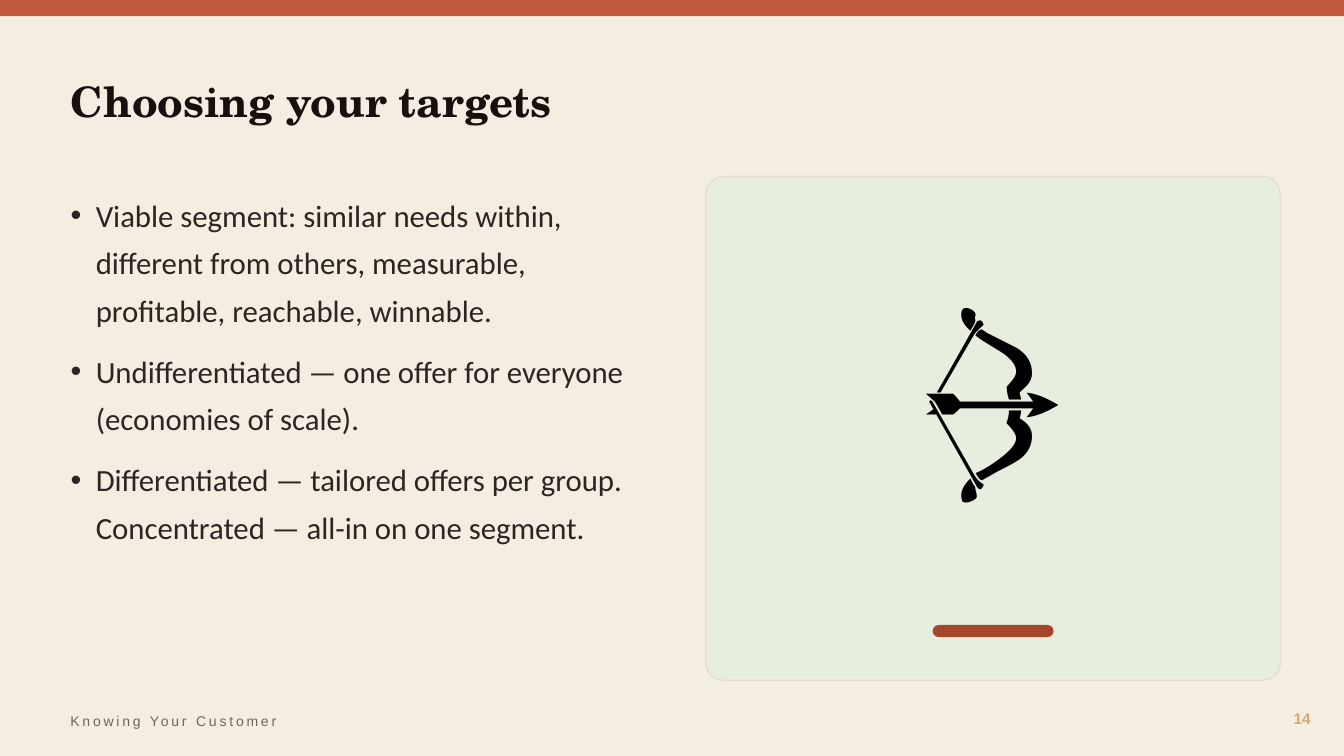
from lxml import etree
from pptx import Presentation
from pptx.dml.color import RGBColor
from pptx.enum.shapes import MSO_SHAPE
from pptx.enum.text import MSO_ANCHOR, MSO_AUTO_SIZE, PP_ALIGN
from pptx.oxml.ns import qn
from pptx.util import Pt

RECT, ROUNDED = MSO_SHAPE.RECTANGLE, MSO_SHAPE.ROUNDED_RECTANGLE
TOP, MIDDLE = MSO_ANCHOR.TOP, MSO_ANCHOR.MIDDLE
LEFT, CENTER, RIGHT = PP_ALIGN.LEFT, PP_ALIGN.CENTER, PP_ALIGN.RIGHT

TITLE = "Choosing your targets"
BULLETS = [
    "Viable segment: similar needs within, different from others, "
    "measurable, profitable, reachable, winnable.",
    "Undifferentiated — one offer for everyone (economies of scale).",
    "Differentiated — tailored offers per group. "
    "Concentrated — all-in on one segment.",
]
ICON = "🏹"
FOOTER = "Knowing Your Customer"
PAGE = "14"

COLORS = {
    "background": "F4EDE2", "bar": "C45A3D", "card": "E8EEDF",
    "card_line": "E4DDD0", "accent": "A4452C", "title": "16110D",
    "body": "2A2622", "icon": "000000", "page": "D9A86C", "footer": "6E665C",
}
FONTS = {
    "title": {"name": "TeX Gyre Schola", "size": Pt(30), "bold": True},
    "body": {"name": "Calibri", "size": Pt(22)},
    "icon": {"name": "Calibri", "size": Pt(150)},
    "page": {"name": "Arial", "size": Pt(11), "bold": True},
    "footer": {"name": "Arial", "size": Pt(10)},
}
PX = 9144  # 100 px to the inch
SLIDE_W, SLIDE_H = 1333, 750
CARD_X, CARD_Y, CARD_W, CARD_H = 700, 175, 570, 500
ACCENT_W, ACCENT_H = 120, 12
INDENT = 25


def emu(*lengths):
    return [n * PX for n in lengths]


def rgb(role):
    return RGBColor.from_string(COLORS[role])


def add_block(kind, box, fill, line=None, radius=None):
    sp = s.shapes.add_shape(kind, *emu(*box))
    sp.shadow.inherit = False
    sp.fill.solid()
    sp.fill.fore_color.rgb = rgb(fill)
    if line:
        sp.line.color.rgb = rgb(line)
        sp.line.width = Pt(1)
    else:
        sp.line.fill.background()
    if radius is not None:
        sp.adjustments[0] = radius


def write(sp, box, lines, role, align=LEFT, anchor=MIDDLE):
    """Place a text shape and fill it with one paragraph per line."""
    sp.left, sp.top, sp.width, sp.height = emu(*box)
    tf = sp.text_frame
    tf.word_wrap = True
    tf.auto_size = MSO_AUTO_SIZE.NONE
    tf.vertical_anchor = anchor
    tf.text = "\n".join(lines)
    for p in tf.paragraphs:
        p.alignment = align
        font = p.runs[0].font
        for name, value in FONTS[role].items():
            setattr(font, name, value)
        font.color.rgb = rgb(role)
    return tf


def add_text(box, text, role, align=LEFT):
    return write(s.shapes.add_textbox(*emu(*box)), box, [text], role, align)


prs = Presentation()
prs.slide_width, prs.slide_height = emu(SLIDE_W, SLIDE_H)
s = prs.slides.add_slide(prs.slide_layouts[1])
s.background.fill.solid()
s.background.fill.fore_color.rgb = rgb("background")

add_block(RECT, (0, 0, SLIDE_W, 16), "bar")
write(s.shapes.title, (60, 50, 1210, 100), [TITLE], "title")

add_block(ROUNDED, (CARD_X, CARD_Y, CARD_W, CARD_H), "card", "card_line", 0.036)
add_text((CARD_X, CARD_Y, CARD_W, 410), ICON, "icon", CENTER)
accent_x = CARD_X + (CARD_W - ACCENT_W) // 2
add_block(ROUNDED, (accent_x, 620, ACCENT_W, ACCENT_H), "accent", radius=0.5)

body = write(s.placeholders[1], (60, 180, 600, 500), BULLETS, "body", anchor=TOP)
for p in body.paragraphs:
    pPr = p._p.get_or_add_pPr()
    pPr.set("marL", str(INDENT * PX))
    pPr.set("indent", str(-INDENT * PX))
    etree.SubElement(pPr, qn("a:buChar")).set("char", "•")
    p.line_spacing = 1.28
    p.space_before = Pt(0)
    p.space_after = Pt(10)

add_text((1220, 695, 90, 35), PAGE, "page", RIGHT)
footer = add_text((60, 700, 800, 30), FOOTER, "footer")
footer.paragraphs[0].runs[0].font._element.set("spc", "200")

prs.save("out.pptx")
